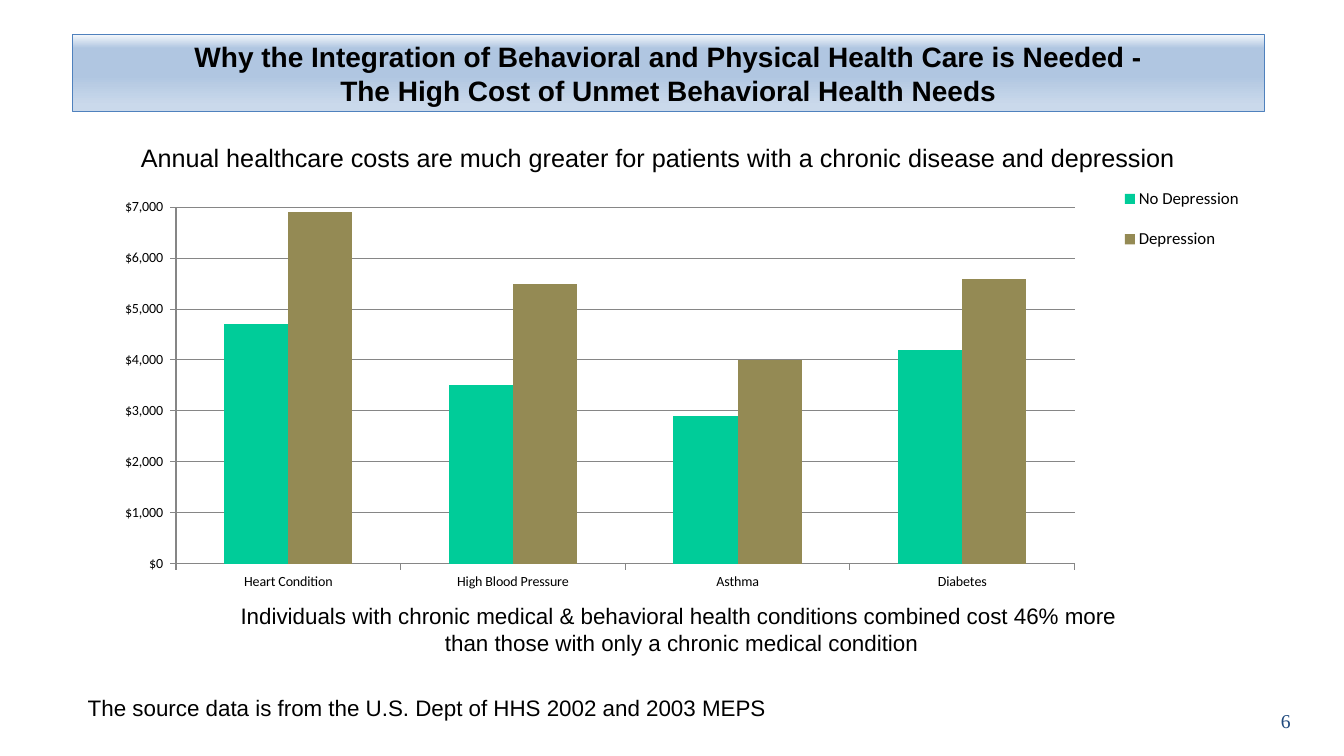
from dataclasses import dataclass

from lxml.etree import SubElement
from pptx import Presentation
from pptx.chart.data import CategoryChartData
from pptx.dml.color import RGBColor
from pptx.enum.chart import XL_CHART_TYPE, XL_LEGEND_POSITION, XL_TICK_MARK
from pptx.enum.shapes import MSO_SHAPE
from pptx.enum.text import MSO_ANCHOR, PP_ALIGN
from pptx.oxml.ns import qn
from pptx.util import Inches, Pt


@dataclass(frozen=True)
class Theme:
    """Colours, fonts and type sizes of the slide."""
    ink: str = "000000"
    navy: str = "1F497D"
    edge: str = "4F81BD"
    grid: str = "868686"
    bars: tuple = ("00CC99", "948A54")
    fade: tuple = ((0, "F6F9FC"), (18, "B0C6E1"), (53, "B0C6E1"), (91, "CAD9EB"))
    sans: str = "Arial"
    serif: str = "Times New Roman"
    label: str = "Calibri"
    title: int = 20
    lead: int = 18
    body: int = 16
    page: int = 14
    key: int = 12
    tick: int = 10


THEME = Theme()


def tint(code):
    """Turn a hex code into a colour."""
    return RGBColor.from_string(code)


def style(font, size, face=THEME.sans, color=THEME.ink, bold=False):
    """Set the size, face, colour and weight of a font."""
    font.size, font.name, font.bold = Pt(size), face, bold
    font.color.rgb = tint(color)


def write(frame, text, align=PP_ALIGN.CENTER, anchor=MSO_ANCHOR.TOP,
          inset=(0, 0), indent=0, **look):
    """Fill a text frame, one paragraph for each line of text."""
    frame.word_wrap = True
    frame.vertical_anchor = anchor
    frame.margin_left = frame.margin_right = Inches(inset[0])
    frame.margin_top = frame.margin_bottom = Inches(inset[1])
    for spot, line in enumerate(text.split("\n")):
        para = frame.add_paragraph() if spot else frame.paragraphs[0]
        para.alignment = align
        if indent:
            para._p.get_or_add_pPr().set("marL", str(Inches(indent)))
        run = para.add_run()
        run.text = line
        style(run.font, **look)


def note(slide, box, text, **look):
    """Place a line of text in an unfilled outline."""
    left, top, width, height = map(Inches, box)
    right, base = left + width, top + height
    pen = slide.shapes.build_freeform(left, top)
    pen.add_line_segments([(right, top), (right, base), (left, base)], close=True)
    area = pen.convert_to_shape()
    area.shadow.inherit = False
    area.fill.background()
    area.line.fill.background()
    write(area.text_frame, text, **look)


def number(slide, box, text):
    """Place the page number."""
    area = slide.shapes.add_textbox(*map(Inches, box))
    write(area.text_frame, text, align=PP_ALIGN.RIGHT, anchor=MSO_ANCHOR.MIDDLE,
          inset=(0.1, 0.05), size=THEME.page, face=THEME.serif, color=THEME.navy)


def banner(slide, box, text):
    """Place the title bar with its gradient."""
    bar = slide.shapes.add_shape(MSO_SHAPE.RECTANGLE, *map(Inches, box))
    bar.shadow.inherit = False
    bar.line.color.rgb = tint(THEME.edge)
    bar.line.width = Pt(0.75)
    bar.fill.gradient()
    bar.fill.gradient_angle = 270
    stops = bar._element.spPr.find(qn("a:gradFill")).find(qn("a:gsLst"))
    for stop in list(stops):
        stops.remove(stop)
    for place, code in THEME.fade:
        stop = SubElement(stops, qn("a:gs"), pos=str(place * 1000))
        SubElement(stop, qn("a:srgbClr"), val=code)
    write(bar.text_frame, text, anchor=MSO_ANCHOR.MIDDLE, inset=(0.1, 0.05),
          size=THEME.title, bold=True)


def layout(part, box, inner=False):
    """Pin a chart part to a box given in shares of the chart."""
    old = part.find(qn("c:layout"))
    if old is None:
        old = SubElement(part, qn("c:layout"))
        lead = part.find(qn("c:legendPos"))
        if lead is None:
            part.insert(0, old)
        else:
            lead.addnext(old)
    hold = SubElement(old, qn("c:manualLayout"))
    if inner:
        SubElement(hold, qn("c:layoutTarget"), val="inner")
    for name in ("xMode", "yMode"):
        SubElement(hold, qn(f"c:{name}"), val="edge")
    for name, share in zip("xywh", box):
        SubElement(hold, qn(f"c:{name}"), val=str(share))


def costs(slide, box):
    """Place the column chart of annual costs."""
    data = CategoryChartData()
    data.categories = ["Heart Condition", "High Blood Pressure", "Asthma", "Diabetes"]
    data.add_series("No Depression", (4700, 3500, 2900, 4200))
    data.add_series("Depression", (6900, 5500, 4000, 5600))
    chart = slide.shapes.add_chart(
        XL_CHART_TYPE.COLUMN_CLUSTERED, *map(Inches, box), data).chart
    style(chart.font, THEME.tick, THEME.label)
    chart.has_title = False

    plot = chart.plots[0]
    plot.gap_width, plot.overlap, plot.vary_by_categories = 150, 0, False
    for series, code in zip(plot.series, THEME.bars):
        series.format.fill.solid()
        series.format.fill.fore_color.rgb = tint(code)

    scale = chart.value_axis
    scale.minimum_scale, scale.maximum_scale, scale.major_unit = 0, 7000, 1000
    scale.has_major_gridlines = True
    scale.tick_labels.number_format = '"$"#,##0_);[Red]\\("$"#,##0\\)'
    scale.tick_labels.number_format_is_linked = False
    for axis in (scale, chart.category_axis):
        axis.major_tick_mark = XL_TICK_MARK.OUTSIDE
        axis.minor_tick_mark = XL_TICK_MARK.NONE
    for part in (scale, chart.category_axis, scale.major_gridlines):
        part.format.line.color.rgb = tint(THEME.grid)
        part.format.line.width = Pt(0.75)

    chart.has_legend = True
    key = chart.legend
    key.position = XL_LEGEND_POSITION.RIGHT
    key.include_in_layout = False
    style(key.font, THEME.key, THEME.label)
    layout(key._element, (0.853, 0.01, 0.13, 0.23))
    layout(chart._chartSpace.chart.plotArea, (0.055, 0.098, 0.771, 0.813), inner=True)


def main():
    """Build the slide and save it."""
    deck = Presentation()
    deck.slide_width, deck.slide_height = Inches(13.33), Inches(7.5)
    slide = deck.slides.add_slide(deck.slide_layouts[6])
    note(slide, (0.51, 1.41, 12.03, 0.44),
         "Annual healthcare costs are much greater for patients "
         "with a chronic disease and depression", size=THEME.lead)
    note(slide, (0.87, 6.89, 7.29, 0.32),
         "The source data is from the U.S. Dept of HHS 2002 and 2003 MEPS",
         align=PP_ALIGN.LEFT, size=THEME.body)
    note(slide, (1.11, 5.97, 10.79, 0.62),
         "Individuals with chronic medical & behavioral health conditions "
         "combined cost 46% more \n"
         "than those with only a chronic medical condition",
         indent=0.51, size=THEME.body)
    costs(slide, (1.11, 1.63, 11.56, 4.35))
    number(slide, (12.49, 6.95, 0.41, 0.4), "6")
    banner(slide, (0.72, 0.34, 11.82, 0.77),
           "Why the Integration of Behavioral and Physical Health Care is Needed -\n"
           "The High Cost of Unmet Behavioral Health Needs")
    deck.save("out.pptx")


if __name__ == "__main__":
    main()
